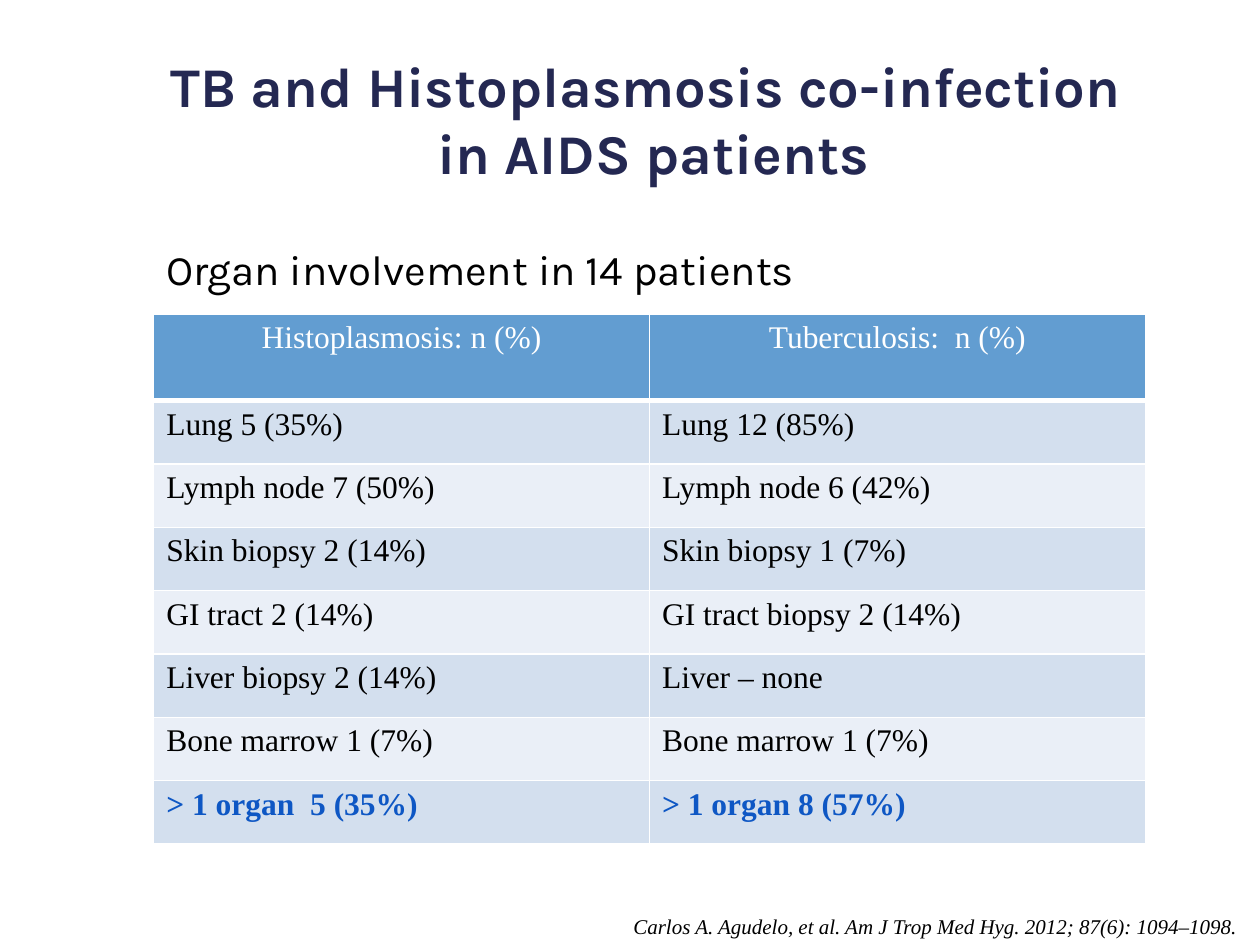
from lxml.etree import SubElement
from pptx import Presentation
from pptx.dml.color import RGBColor
from pptx.enum.text import MSO_ANCHOR, MSO_AUTO_SIZE, PP_ALIGN
from pptx.oxml.ns import qn
from pptx.util import Inches, Pt

COLORS = {
    "title": "242852",
    "text": "000000",
    "white": "FFFFFF",
    "header": "629DD1",
    "odd_row": "D3DFEE",
    "even_row": "EAEFF7",
    "highlight": "0E57C4",
}
SERIF = "Times New Roman"
SANS = "Karla"

HEADINGS = ("Histoplasmosis: n (%)", "Tuberculosis:  n (%)")
ORGANS = [
    ("Lung 5 (35%)", "Lung 12 (85%)"),
    ("Lymph node 7 (50%)", "Lymph node 6 (42%)"),
    ("Skin biopsy 2 (14%)", "Skin biopsy 1 (7%)"),
    ("GI tract 2 (14%)", "GI tract biopsy 2 (14%)"),
    ("Liver biopsy 2 (14%)", "Liver – none"),
    ("Bone marrow 1 (7%)", "Bone marrow 1 (7%)"),
    ("> 1 organ  5 (35%)", "> 1 organ 8 (57%)"),
]


def add_span(para, text, size, font, color, bold=False, italic=False):
    span = para.add_run()
    span.text = text
    span.font.size = Pt(size)
    span.font.name = font
    span.font.bold = bold
    span.font.italic = italic
    span.font.color.rgb = RGBColor.from_string(COLORS[color])


def set_title(page, lines):
    title = page.shapes.title
    title.left, title.top = Inches(0.75), Inches(0.52)
    title.width, title.height = Inches(8.87), Inches(0.84)
    frame = title.text_frame
    frame.auto_size = MSO_AUTO_SIZE.NONE
    frame.vertical_anchor = MSO_ANCHOR.MIDDLE
    para = frame.paragraphs[0]
    para.alignment = PP_ALIGN.CENTER
    for index, line in enumerate(lines):
        if index:
            para.add_line_break()
        add_span(para, line, 32, SANS, "title", bold=True)


def add_text(page, left, top, width, height, text, size, font,
             align=PP_ALIGN.LEFT, italic=False):
    box = page.shapes.add_textbox(
        Inches(left), Inches(top), Inches(width), Inches(height))
    frame = box.text_frame
    frame.word_wrap = True
    frame.auto_size = MSO_AUTO_SIZE.SHAPE_TO_FIT_TEXT
    para = frame.paragraphs[0]
    para.alignment = align
    add_span(para, text, size, font, "text", italic=italic)


def set_borders(cell, bottom_width, top_width):
    properties = cell._tc.get_or_add_tcPr()
    widths = {"a:lnL": 1, "a:lnR": 1, "a:lnT": top_width, "a:lnB": bottom_width}
    for tag, width in widths.items():
        line = SubElement(properties, qn(tag), w=str(Pt(width)))
        fill = SubElement(line, qn("a:solidFill"))
        SubElement(fill, qn("a:srgbClr"), val=COLORS["white"])


def fill_cell(cell, text, fill, color, align, bold, top_width, bottom_width):
    # Borders come before the fill in the cell properties
    set_borders(cell, bottom_width, top_width)
    cell.fill.solid()
    cell.fill.fore_color.rgb = RGBColor.from_string(COLORS[fill])
    para = cell.text_frame.paragraphs[0]
    para.alignment = align
    add_span(para, text, 18, SERIF, color, bold=bold)


def add_organ_table(page):
    rows = [HEADINGS, *ORGANS]
    width, height, header_height = Inches(7.87), Inches(4.21), Inches(0.69)
    table = page.shapes.add_table(
        len(rows), 2, Inches(1.22), Inches(2.49), width, height).table
    table.rows[0].height = header_height
    for row in list(table.rows)[1:]:
        row.height = (height - header_height) // len(ORGANS)

    for index, texts in enumerate(rows):
        is_header, is_total = index == 0, index == len(ORGANS)
        if is_header:
            fill, color, align = "header", "white", PP_ALIGN.CENTER
        else:
            fill = "odd_row" if index % 2 else "even_row"
            color = "highlight" if is_total else "text"
            align = PP_ALIGN.LEFT
        for column, text in enumerate(texts):
            fill_cell(table.cell(index, column), text, fill, color, align,
                      bold=is_total, top_width=3 if index == 1 else 1,
                      bottom_width=3 if is_header else 1)


def main():
    deck = Presentation()
    deck.slide_width, deck.slide_height = Inches(10), Inches(7.5)
    page = deck.slides.add_slide(deck.slide_layouts[5])

    # Title
    set_title(page, ["TB and Histoplasmosis co-infection ", "in AIDS patients"])
    # Citation
    add_text(page, 1.76, 7.2, 8.16, 0.3,
             "Carlos A. Agudelo, et al. Am J Trop Med Hyg. 2012; 87(6): 1094–1098.",
             12, SERIF, PP_ALIGN.RIGHT, italic=True)
    # Organ involvement
    add_organ_table(page)
    add_text(page, 1.22, 1.88, 5.83, 0.5,
             "Organ involvement in 14 patients", 24, SANS)

    deck.save("out.pptx")


if __name__ == "__main__":
    main()
